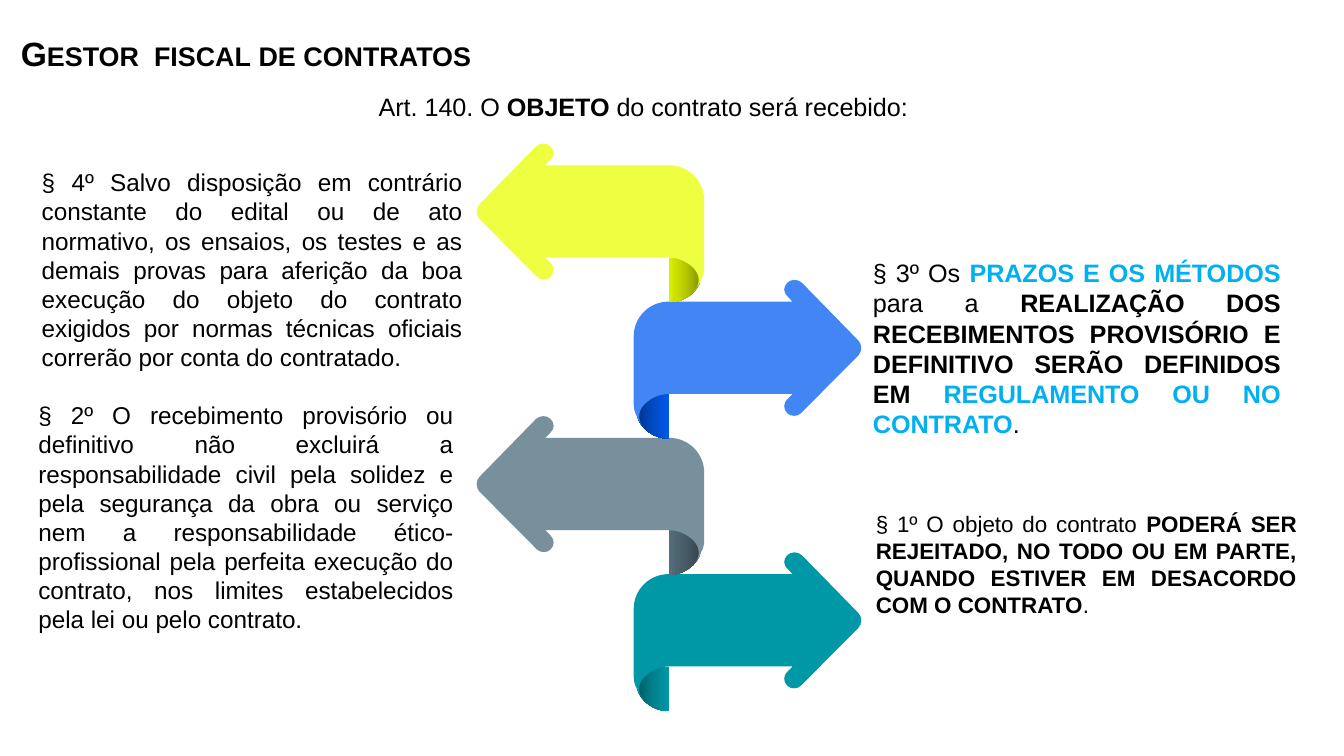
from copy import deepcopy

from lxml.etree import SubElement
from pptx import Presentation
from pptx.dml.color import RGBColor
from pptx.enum.text import MSO_ANCHOR, MSO_AUTO_SIZE, PP_ALIGN
from pptx.oxml.ns import qn
from pptx.util import Pt

BLACK = RGBColor(0x00, 0x00, 0x00)
SKY = RGBColor(0x00, 0xB0, 0xF0)
YELLOW = RGBColor(0xEE, 0xFF, 0x41)
BLUE = RGBColor(0x42, 0x85, 0xF4)
GRAY = RGBColor(0x78, 0x90, 0x9C)
TEAL = RGBColor(0x00, 0x97, 0xA7)
YELLOW_FOLD = [RGBColor(0x81, 0x8E, 0x00), RGBColor(0xB8, 0xCA, 0x00), RGBColor(0xDB, 0xF0, 0x00)]
BLUE_FOLD = [RGBColor(0x00, 0x34, 0x8A), RGBColor(0x00, 0x4A, 0xC4), RGBColor(0x00, 0x58, 0xE9)]
GRAY_FOLD = [RGBColor(0x32, 0x41, 0x48), RGBColor(0x48, 0x5C, 0x67), RGBColor(0x55, 0x6E, 0x7A)]
TEAL_FOLD = [RGBColor(0x00, 0x59, 0x63), RGBColor(0x00, 0x7F, 0x8D), RGBColor(0x00, 0x97, 0xA7)]

FONT = "Arial"
AXIS = 358.4
FIRST_TOP = 88.6
ARROW_STEP = 73

ARROW_OUTLINE = [
    [(63.4, -10.1)],
    [(61.2, -7.9), (61.2, -5), (63.4, -2.9)],
    [(66.2, 0)],
    [(0, 0)],
    [(-10.8, 0), (-18.9, 8.6), (-18.9, 18.7)],
    [(-18.9, 54.7)],
    [(-18.9, 57), (-18.5, 59), (-17.3, 61.2)],
    [(-16.6, 63.4), (-15.1, 65.5), (-13.5, 67.5)],
    [(-16.8, 64), (-16.8, 59), (-13.5, 55.4)],
    [(-10.1, 51.8), (-5.4, 49.5), (0, 49.5)],
    [(66.2, 49.5)],
    [(63.4, 52.3)],
    [(61.2, 54.5), (61.2, 57.6), (63.4, 59.8)],
    [(64.4, 60.8), (65.7, 61.2), (67, 61.2)],
    [(68.4, 61.2), (69.7, 60.8), (70.7, 59.8)],
    [(101.5, 28.8)],
    [(103.5, 26.6), (103.5, 23), (101.5, 20.9)],
    [(71.3, -10)],
    [(69, -12.2), (65.5, -12.2), (63.4, -10.1)],
]
FOLD_OUTLINE = [
    [(-17.3, 61.2)],
    [(-15.1, 68.4), (-7.9, 73.4), (0, 73.4)],
    [(0, 49.5)],
    [(-7.9, 49.5), (-15.1, 54.5), (-17.3, 61.2)],
]


def bend_segments(shape, outline):
    lines = iter(shape._element.findall(".//" + qn("a:lnTo")))
    for segment in outline[1:]:
        segment_lines = [next(lines) for _ in segment]
        if len(segment) == 3:
            path = segment_lines[0].getparent()
            curve = SubElement(path, qn("a:cubicBezTo"))
            path.insert(path.index(segment_lines[0]), curve)
            for line in segment_lines:
                curve.append(line[0])
                path.remove(line)


def add_outline(group, outline, top, direction):
    points = [(Pt(AXIS + direction * x), Pt(top + y)) for segment in outline for x, y in segment]
    builder = group.shapes.build_freeform(*points[0])
    builder.add_line_segments(points[1:], close=True)
    shape = builder.convert_to_shape()
    bend_segments(shape, outline)
    shape.shadow.inherit = False
    shape.line.fill.background()
    return shape


def add_folded_arrow(slide, top, direction, color, fold_colors):
    group = slide.shapes.add_group_shape()
    fold = add_outline(group, FOLD_OUTLINE, top, direction)
    fold.fill.gradient()
    fold.fill.gradient_angle = 0 if direction > 0 else 180
    stop_list = fold._element.find(".//" + qn("a:gsLst"))
    stop_list.insert(1, deepcopy(stop_list[0]))
    for stop, stop_color, position in zip(fold.fill.gradient_stops, fold_colors, (0, 0.5, 1)):
        stop.color.rgb = stop_color
        stop.position = position
    arrow = add_outline(group, ARROW_OUTLINE, top, direction)
    arrow.fill.solid()
    arrow.fill.fore_color.rgb = color


def format_paragraph(frame, size):
    frame.word_wrap = True
    frame.auto_size = MSO_AUTO_SIZE.SHAPE_TO_FIT_TEXT
    frame.vertical_anchor = MSO_ANCHOR.TOP
    paragraph = frame.paragraphs[0]
    paragraph.alignment = PP_ALIGN.JUSTIFY
    paragraph.font.name = FONT
    paragraph.font.size = Pt(size)
    paragraph.font.color.rgb = BLACK
    return paragraph


def add_title(slide, text):
    title = slide.shapes.title
    title.left, title.top, title.width, title.height = Pt(4), Pt(14.1), Pt(445), Pt(29)
    paragraph = format_paragraph(title.text_frame, 18)
    paragraph.font.bold = True
    run = paragraph.add_run()
    run.text = text
    run._r.get_or_add_rPr().set("cap", "small")


def add_clause(slide, left, top, width, height, size, *parts):
    box = slide.shapes.add_textbox(Pt(left), Pt(top), Pt(width), Pt(height))
    paragraph = format_paragraph(box.text_frame, size)
    for text, bold, color in parts:
        run = paragraph.add_run()
        run.text = text
        if bold:
            run.font.bold = True
        if color != BLACK:
            run.font.color.rgb = color


def plain(text):
    return text, False, BLACK


def strong(text, color=BLACK):
    return text, True, color


def main():
    presentation = Presentation()
    presentation.slide_width, presentation.slide_height = Pt(720), Pt(405)
    slide = presentation.slides.add_slide(presentation.slide_layouts[5])

    arrows = [(-1, YELLOW, YELLOW_FOLD), (1, BLUE, BLUE_FOLD), (-1, GRAY, GRAY_FOLD), (1, TEAL, TEAL_FOLD)]
    for index, (direction, color, fold_colors) in reversed(list(enumerate(arrows))):
        add_folded_arrow(slide, FIRST_TOP + index * ARROW_STEP, direction, color, fold_colors)

    add_title(slide, "Gestor  fiscal de contratos")
    add_clause(slide, 195.8, 45.4, 360, 23.8, 13.5,
               plain("Art. 140. O "), strong("OBJETO"), plain(" do contrato será recebido:"))
    add_clause(slide, 462.1, 270, 239.8, 65.5, 12,
               plain("§ 1º O objeto do contrato "),
               strong("PODERÁ SER REJEITADO, NO TODO OU EM PARTE, QUANDO ESTIVER EM DESACORDO COM O CONTRATO"),
               plain("."))
    add_clause(slide, 13.5, 211, 236.2, 133.2, 13,
               plain("§ 2º O recebimento provisório ou definitivo não excluirá a responsabilidade civil "
                     "pela solidez e pela segurança da obra ou serviço nem a responsabilidade "
                     "ético-profissional pela perfeita execução do contrato, nos limites "
                     "estabelecidos pela lei ou pelo contrato."))
    add_clause(slide, 460.6, 134.4, 232.6, 105, 13.5,
               plain("§ 3º Os "), strong("PRAZOS E OS MÉTODOS ", SKY), plain("para a "),
               strong("REALIZAÇÃO DOS RECEBIMENTOS PROVISÓRIO E DEFINITIVO SERÃO DEFINIDOS EM "),
               strong("REGULAMENTO OU NO CONTRATO", SKY), plain("."))
    add_clause(slide, 15.3, 86.2, 239.2, 121.7, 13,
               plain("§ 4º Salvo disposição em contrário constante do edital ou de ato normativo, "
                     "os ensaios, os testes e as demais provas para aferição da boa execução do "
                     "objeto do contrato exigidos por normas técnicas oficiais correrão por conta "
                     "do contratado."))
    presentation.save("out.pptx")


if __name__ == "__main__":
    main()
